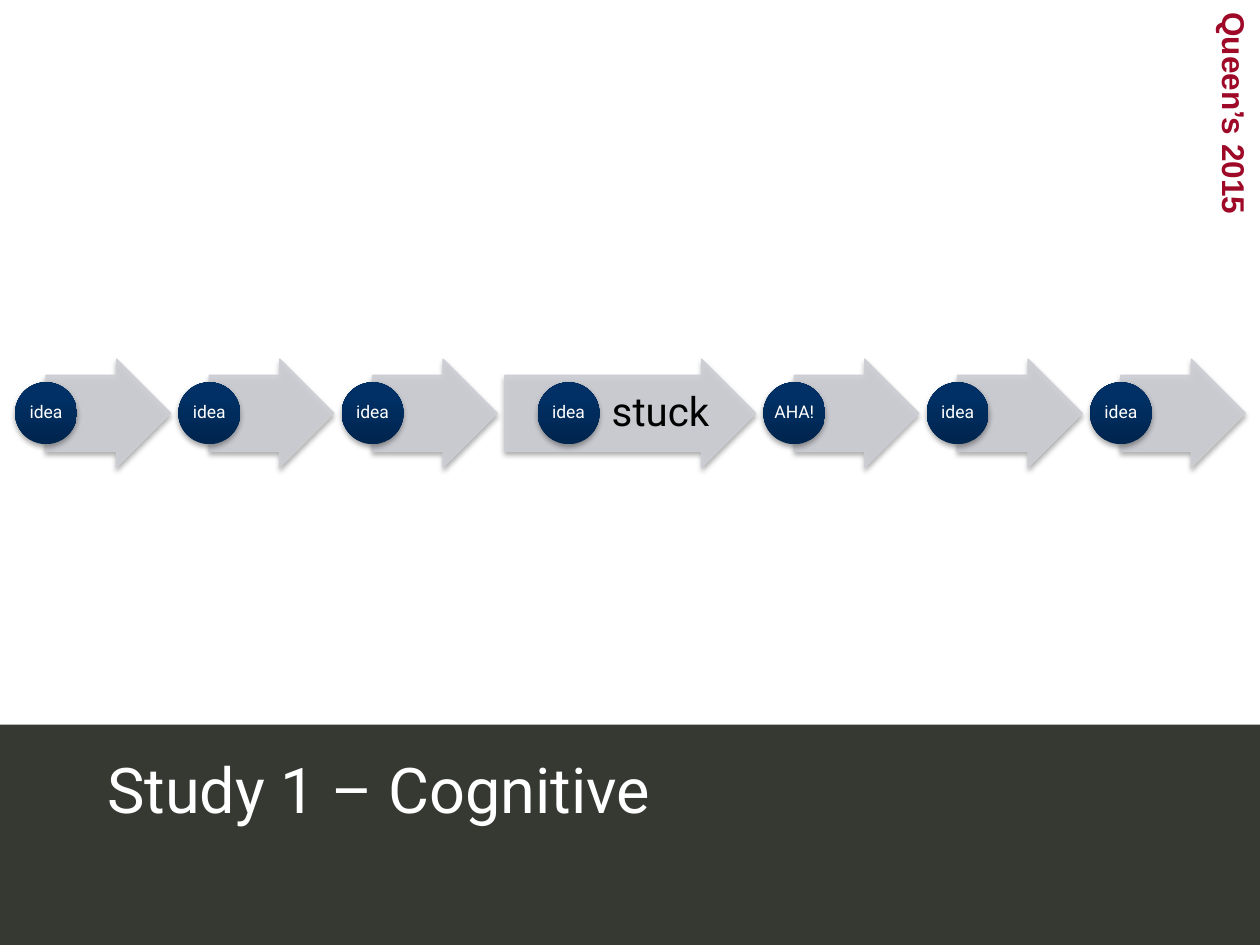
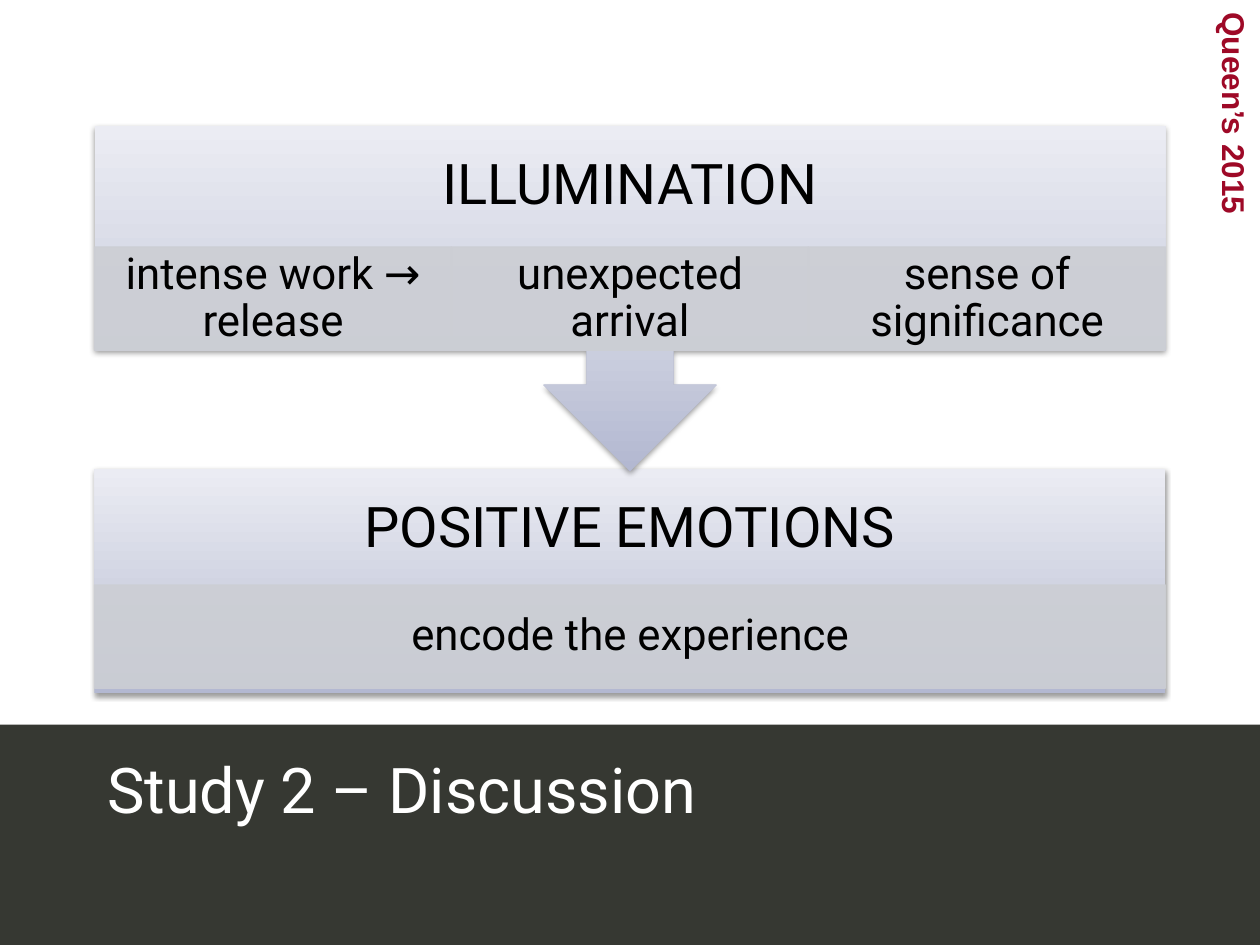
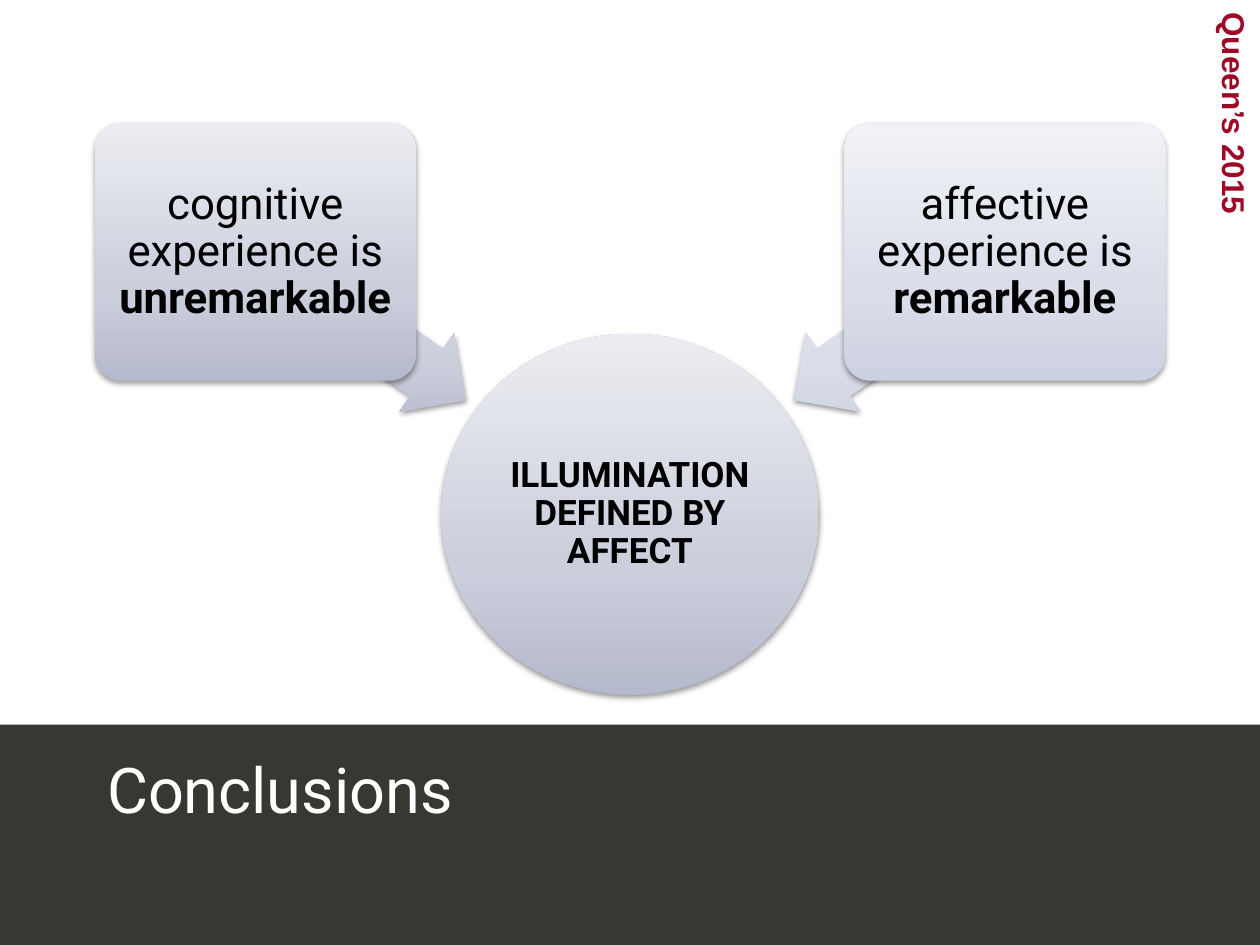
"""Builds three slides on how illumination is experienced."""
import lxml.etree
import pptx
import pptx.dml.color
import pptx.enum.shapes
import pptx.enum.text
import pptx.oxml.ns
import pptx.util

Pt = pptx.util.Pt
RGB = pptx.dml.color.RGBColor
SHAPE = pptx.enum.shapes.MSO_SHAPE
ALIGN = pptx.enum.text.PP_ALIGN
ANCHOR = pptx.enum.text.MSO_ANCHOR
qn = pptx.oxml.ns.qn

WHITE = RGB(0xFF, 0xFF, 0xFF)
BLACK = RGB(0, 0, 0)
CHARCOAL = RGB(0x36, 0x38, 0x32)
CRIMSON = RGB(0x9E, 0x09, 0x27)
PALE_GREY = RGB(0xCC, 0xCE, 0xD4)

NAVY = [(0, RGB(0x00, 0x25, 0x4E)), (80, RGB(0x00, 0x30, 0x65)), (100, RGB(0x00, 0x31, 0x65))]
LAVENDER = [(0, RGB(0xB3, 0xB8, 0xD1)), (35, RGB(0xCA, 0xCE, 0xDE)), (100, RGB(0xEB, 0xEC, 0xF3))]
SLATE = [(0, RGB(0xB5, 0xB9, 0xCD)), (35, RGB(0xCB, 0xCE, 0xDB)), (100, RGB(0xEB, 0xED, 0xF2))]
MIST = [(0, RGB(0xCC, 0xD1, 0xE1)), (35, RGB(0xDB, 0xDE, 0xE9)), (100, RGB(0xF1, 0xF2, 0xF7))]

FONT = "Roboto"


def add_shape(slide, kind, left, top, width, height, rotation=0, adjustments=()):
    """Add an outlineless, shadowless preset shape."""
    shape = slide.shapes.add_shape(kind, Pt(left), Pt(top), Pt(width), Pt(height))
    shape.rotation = rotation
    for index, value in enumerate(adjustments):
        shape.adjustments[index] = value
    shape.shadow.inherit = False
    shape.line.fill.background()
    return shape


def paint_gradient(shape, stops):
    """Fill a shape from its bottom up, whatever its rotation."""
    shape.fill.gradient()
    shape.fill.gradient_angle = 90
    gradient = shape.element.spPr.find(qn("a:gradFill"))
    gradient.set("rotWithShape", "0")
    stop_list = gradient.find(qn("a:gsLst"))
    for stop in list(stop_list):
        stop_list.remove(stop)
    for position, colour in stops:
        stop = lxml.etree.SubElement(stop_list, qn("a:gs"), pos=str(position * 1000))
        lxml.etree.SubElement(stop, qn("a:srgbClr"), val=str(colour))


def paint_grey(shape):
    """Give a shape a pale grey fill and line, slightly transparent."""
    shape.fill.solid()
    shape.fill.fore_color.rgb = PALE_GREY
    shape.line.color.rgb = PALE_GREY
    shape.line.width = Pt(0.75)
    for colour in shape.element.spPr.iter(qn("a:srgbClr")):
        lxml.etree.SubElement(colour, qn("a:alpha"), val="90000")


def cast_shadow(shape, distance=1.6, opacity=38):
    """Cast a soft shadow straight down."""
    effects = shape.element.spPr.find(qn("a:effectLst"))
    shadow = lxml.etree.SubElement(
        effects, qn("a:outerShdw"), blurRad=str(Pt(3.1)), dist=str(Pt(distance)),
        dir="5400000", rotWithShape="0")
    colour = lxml.etree.SubElement(shadow, qn("a:srgbClr"), val=str(BLACK))
    lxml.etree.SubElement(colour, qn("a:alpha"), val=str(opacity * 1000))


def write(shape, text, size, colour=BLACK, bold=False, font=FONT, align=ALIGN.CENTER,
          margins=(1, 1), spacing=0.9, ending=""):
    """Write one paragraph into a shape, with an optional bold ending."""
    frame = shape.text_frame
    frame.word_wrap = True
    frame.auto_size = pptx.enum.text.MSO_AUTO_SIZE.NONE
    frame.vertical_anchor = ANCHOR.MIDDLE
    frame.margin_left = frame.margin_right = Pt(margins[0])
    frame.margin_top = frame.margin_bottom = Pt(margins[1])
    paragraph = frame.paragraphs[0]
    paragraph.alignment = align
    paragraph.line_spacing = spacing
    paragraph.font.name = font
    paragraph.font.size = Pt(size)
    paragraph.font.bold = bold
    paragraph.font.color.rgb = colour
    paragraph.add_run().text = text
    if ending:
        emphasis = paragraph.add_run()
        emphasis.text = ending
        emphasis.font.bold = True


def add_label(slide, left, top, width, height, text, size, **style):
    """Add a text box."""
    label = slide.shapes.add_textbox(Pt(left), Pt(top), Pt(width), Pt(height))
    write(label, text, size, **style)
    return label


def furnish_layout(slide):
    """Put the title band and the side caption on the slide's layout."""
    band = add_shape(slide, SHAPE.RECTANGLE, 0, 414, 720, 126)
    band.fill.solid()
    band.fill.fore_color.rgb = CHARCOAL
    caption = add_label(slide, 578.9, 112.3, 253.4, 28.8, "Queen’s 2015", 18, colour=CRIMSON,
                        bold=True, font="Arial", align=ALIGN.LEFT, margins=(7.2, 3.6), spacing=1)
    caption.rotation = 90
    layout_tree = slide.slide_layout.shapes.element
    for position, part in enumerate((band, caption), start=2):
        layout_tree.insert(position, part.element)


def add_title(slide, text):
    """Place the title on the dark band."""
    title = slide.shapes.title
    title.left, title.top, title.width, title.height = Pt(54), Pt(423.4), Pt(642.2), Pt(54)
    write(title, text, 36, colour=WHITE, align=ALIGN.LEFT, margins=(7.2, 3.6), spacing=1)


def add_step(slide, left, top, text, arrow_offset, arrow_width, circle_offset):
    """Draw one arrow with its idea circle."""
    height, diameter = 61.9, 35.4
    arrow = add_shape(slide, SHAPE.RIGHT_ARROW, left + arrow_offset, top, arrow_width, height,
                      adjustments=(0.7, 0.5))
    paint_grey(arrow)
    cast_shadow(arrow, 1.8, 35)
    circle = add_shape(slide, SHAPE.OVAL, left + circle_offset, top + (height - diameter) / 2,
                       diameter, diameter)
    paint_gradient(circle, NAVY)
    cast_shadow(circle, 1.8, 35)
    write(circle, text, 10, colour=WHITE)


def add_idea_chain(slide, left, top):
    """Draw the chain of ideas, with the longer impasse in the middle."""
    gap = 4.4
    for text, is_stuck in (("idea", False), ("idea", False), ("idea", False), ("idea", True),
                           ("AHA!", False), ("idea", False), ("idea", False)):
        if is_stuck:
            add_step(slide, left, top, text, 0, 143.3, 18.7)
            add_label(slide, left + 54, top + 9.3, 70, 43.2, "stuck", 23)
            left += 143.3 + gap
        else:
            add_step(slide, left, top, text, 17.7, 71.2, 0)
            left += 88.9 + gap


def add_stage(slide, kind, left, top, width, height, rotation, heading, details, detail_top):
    """Draw a stage: a heading above a row of equal details."""
    stage = add_shape(slide, kind, left, top, width, height, rotation)
    paint_gradient(stage, LAVENDER)
    cast_shadow(stage)
    add_label(slide, left, top, width, 69.1, heading, 32, margins=(18, 18))
    detail_width = width / len(details)
    for column, text in enumerate(details):
        detail = add_shape(slide, SHAPE.RECTANGLE, left + column * detail_width,
                           top + detail_top, detail_width, 59)
        paint_grey(detail)
        write(detail, text, 25, margins=(13.7, 2.2))


def add_emotion_flow(slide, left, top, width):
    """Draw illumination leading down to positive emotions."""
    add_stage(slide, SHAPE.RECTANGLE, left, top + 195.8, width, 128.2, 0,
              "POSITIVE EMOTIONS", ["encode the experience"], 66.5)
    add_stage(slide, SHAPE.UP_ARROW_CALLOUT, left, top, width, 197.3, 180, "ILLUMINATION",
              ["intense work → release", "unexpected arrival", "sense of significance"], 69.1)


def add_finding(slide, left, top, arrow_left, rotation, stops, text, emphasis):
    """Draw a finding card with an arrow pointing away from it."""
    arrow = add_shape(slide, SHAPE.LEFT_ARROW, arrow_left, top + 88.5, 146.9, 54.7, rotation,
                      (0.6, 0.5))
    card = add_shape(slide, SHAPE.ROUNDED_RECTANGLE, left, top, 183.6, 146.9,
                     adjustments=(0.1,))
    for part in (arrow, card):
        paint_gradient(part, stops)
        cast_shadow(part)
    write(card, text, 25, margins=(3.6, 3.6), ending=emphasis)


def add_conclusion(slide, left, top, width):
    """Draw two findings that point to the conclusion between them."""
    conclusion = add_shape(slide, SHAPE.OVAL, left + (width - 215.6) / 2, top + 120.2,
                           215.6, 206.2)
    paint_gradient(conclusion, SLATE)
    cast_shadow(conclusion)
    write(conclusion, "ILLUMINATION DEFINED BY AFFECT", 20, bold=True)
    add_finding(slide, left, top, left + 78.5, 215, SLATE,
                "cognitive experience is ", "unremarkable")
    add_finding(slide, left + width - 183.6, top, left + width - 78.5 - 146.9, 325, MIST,
                "affective experience is ", "remarkable")


def main():
    """Build and save the presentation."""
    deck = pptx.Presentation()
    deck.slide_width, deck.slide_height = Pt(720), Pt(540)
    title_only = deck.slide_layouts[5]
    cognitive, discussion, conclusions = (deck.slides.add_slide(title_only) for _ in range(3))
    furnish_layout(cognitive)
    add_title(cognitive, "Study 1 – Cognitive")
    add_idea_chain(cognitive, 8.6, 205.2)
    add_title(discussion, "Study 2 – Discussion")
    add_emotion_flow(discussion, 54, 72, 612)
    add_title(conclusions, "Conclusions")
    add_conclusion(conclusions, 54, 70.6, 612)
    deck.save("out.pptx")


if __name__ == "__main__":
    main()
